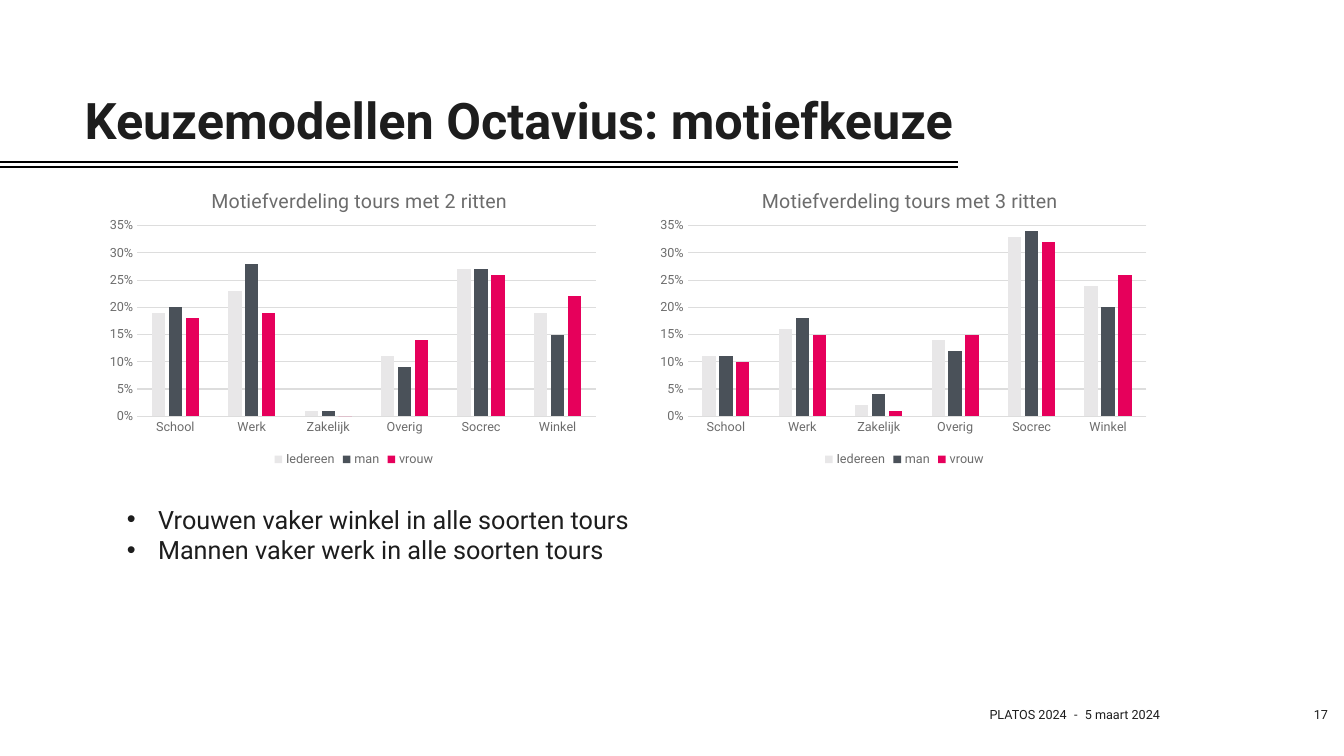
import pptx
import pptx.chart.data
import pptx.dml.color
import pptx.enum.chart
import pptx.enum.shapes
import pptx.enum.text
import pptx.oxml
import pptx.oxml.ns
import pptx.util

Inches, Pt = pptx.util.Inches, pptx.util.Pt
RGBColor = pptx.dml.color.RGBColor
PP_ALIGN = pptx.enum.text.PP_ALIGN
MSO_ANCHOR = pptx.enum.text.MSO_ANCHOR
xl = pptx.enum.chart
qn = pptx.oxml.ns.qn

FONT = "Roboto"
INK = RGBColor(0x1D, 0x1D, 0x1D)
GREY = RGBColor(0x6C, 0x6C, 0x6C)
GRID = RGBColor(0xDD, 0xDD, 0xDD)
BLACK = RGBColor(0, 0, 0)
SERIES_COLORS = {
    "Iedereen": RGBColor(0xE8, 0xE7, 0xE8),
    "man": RGBColor(0x4A, 0x51, 0x59),
    "vrouw": RGBColor(0xE6, 0x00, 0x5B),
}
MOTIVES = ["School", "Werk", "Zakelijk", "Overig", "Socrec", "Winkel"]
TWO_TRIPS = {
    "Iedereen": [0.19, 0.23, 0.01, 0.11, 0.27, 0.19],
    "man": [0.2, 0.28, 0.01, 0.09, 0.27, 0.15],
    "vrouw": [0.18, 0.19, 0, 0.14, 0.26, 0.22],
}
THREE_TRIPS = {
    "Iedereen": [0.11, 0.16, 0.02, 0.14, 0.33, 0.24],
    "man": [0.11, 0.18, 0.04, 0.12, 0.34, 0.2],
    "vrouw": [0.1, 0.15, 0.01, 0.15, 0.32, 0.26],
}


def style_font(font, size, color=INK, bold=False):
    for name, value in {"name": FONT, "size": Pt(size), "bold": bold}.items():
        setattr(font, name, value)
    font.color.rgb = color


def add_text(s, box, lines, size, bold=False, align=PP_ALIGN.LEFT,
             anchor=MSO_ANCHOR.MIDDLE, insets=(0, 0, 0, 0), bullets=False):
    tf = s.shapes.add_textbox(*map(Inches, box)).text_frame
    tf.word_wrap = True
    tf.vertical_anchor = anchor
    for side, inset in zip(("left", "top", "right", "bottom"), insets):
        setattr(tf, f"margin_{side}", Inches(inset))
    for i, line in enumerate(lines):
        p = tf.add_paragraph() if i else tf.paragraphs[0]
        p.alignment = align
        if bullets:
            add_bullet(p)
        r = p.add_run()
        r.text = line
        style_font(r.font, size, bold=bold)


def add_bullet(p):
    pPr = p._p.get_or_add_pPr()
    pPr.set("marL", str(Inches(0.31)))
    pPr.set("indent", str(-Inches(0.31)))
    for tag, key, value in (("a:buFont", "typeface", "Arial"), ("a:buChar", "char", "•")):
        pPr.append(pptx.oxml.parse_xml(
            f'<{tag} {pptx.oxml.ns.nsdecls("a")} {key}="{value}"/>'))


def manual_layout(target="", **fractions):
    """Chart layout element with x, y, w and h as fractions of the chart."""
    modes = '<c:xMode val="edge"/><c:yMode val="edge"/>'
    sizes = "".join(f'<c:{k} val="{v}"/>' for k, v in fractions.items())
    return pptx.oxml.parse_xml(
        f'<c:layout {pptx.oxml.ns.nsdecls("c")}><c:manualLayout>'
        f'{target}{modes}{sizes}</c:manualLayout></c:layout>')


def add_heading(s, left, top, width, height):
    for y in (1.61, 1.66):
        rule = s.shapes.add_connector(pptx.enum.shapes.MSO_CONNECTOR.STRAIGHT,
                                      0, Inches(y), Inches(9.5), Inches(y))
        rule.line.color.rgb = BLACK
        rule.line.width = Pt(1.6)
        rule._element.spPr.append(pptx.oxml.parse_xml(
            f'<a:effectLst {pptx.oxml.ns.nsdecls("a")}/>'))
    add_text(s, (left, top, width, height), ["Keuzemodellen Octavius: motiefkeuze"],
             36, bold=True, anchor=MSO_ANCHOR.BOTTOM)


def add_motive_chart(s, box, title, shares):
    data = pptx.chart.data.CategoryChartData(number_format="0%")
    data.categories = MOTIVES
    for name, values in shares.items():
        data.add_series(name, values)
    chart = s.shapes.add_chart(xl.XL_CHART_TYPE.COLUMN_CLUSTERED,
                               *map(Inches, box), data).chart
    style_font(chart.font, 10)

    chart.has_title = True
    p = chart.chart_title.text_frame.paragraphs[0]
    r = p.add_run()
    r.text = title
    style_font(r.font, 14, GREY)
    title_xml = chart.chart_title._element
    for old in title_xml.findall(qn("c:layout")):
        title_xml.remove(old)
    title_xml.find(qn("c:tx")).addnext(manual_layout(x=0.21, y=0.05))

    chart.has_legend = True
    legend = chart.legend
    legend.position = xl.XL_LEGEND_POSITION.BOTTOM
    legend.include_in_layout = False
    style_font(legend.font, 9, GREY)

    plot = chart.plots[0]
    for name, value in {"gap_width": 219, "overlap": -27, "vary_by_categories": False}.items():
        setattr(plot, name, value)
    for series in plot.series:
        series.format.fill.solid()
        series.format.fill.fore_color.rgb = SERIES_COLORS[series.name]

    cat, val = chart.category_axis, chart.value_axis
    for axis in (cat, val):
        axis.major_tick_mark = axis.minor_tick_mark = xl.XL_TICK_MARK.NONE
        style_font(axis.tick_labels.font, 9, GREY)
    for name, value in {"minimum_scale": 0, "maximum_scale": 0.35, "major_unit": 0.05,
                        "has_major_gridlines": True}.items():
        setattr(val, name, value)
    val.tick_labels.number_format = "0%"
    val.tick_labels.number_format_is_linked = False
    val.format.line.fill.background()
    for line in (cat.format.line, val.major_gridlines.format.line):
        line.color.rgb = GRID
        line.width = Pt(0.75)

    area = plot._element.getparent()
    for old in area.findall(qn("c:layout")):
        area.remove(old)
    area.insert(0, manual_layout('<c:layoutTarget val="inner"/>',
                                 x=0.07, y=0.19, w=0.91, h=0.63))


def add_footer(s, top, height):
    add_text(s, (0.84, top, 9.74, height), ["PLATOS 2024"], 9,
             align=PP_ALIGN.RIGHT, insets=(0.1, 0.05, 0, 0.05))
    add_text(s, (10.58, top, 0.18, height), ["-"], 9, align=PP_ALIGN.CENTER)
    add_text(s, (10.76, top, 1.73, height), ["5 maart 2024"], 9)
    add_text(s, (12.49, top, 0.84, height), ["17"], 9,
             align=PP_ALIGN.RIGHT, insets=(0.1, 0.05, 0.16, 0.05))


def main():
    prs = pptx.Presentation()
    prs.slide_width, prs.slide_height = Inches(13.33), Inches(7.5)
    s = prs.slides.add_slide(prs.slide_layouts[6])
    add_heading(s, 0.84, 0.87, 11.66, 0.61)
    for left, trips, shares in ((1.01, 2, TWO_TRIPS), (6.47, 3, THREE_TRIPS)):
        add_motive_chart(s, (left, 1.67, 5, 3),
                         f"Motiefverdeling tours met {trips} ritten", shares)
    add_text(s, (1.16, 4.95, 5.66, 0.71),
             ["Vrouwen vaker winkel in alle soorten tours",
              "Mannen vaker werk in alle soorten tours"],
             18, anchor=MSO_ANCHOR.TOP, insets=(0.1, 0.05, 0.1, 0.05), bullets=True)
    add_footer(s, 6.89, 0.4)
    prs.save("out.pptx")


if __name__ == "__main__":
    main()
